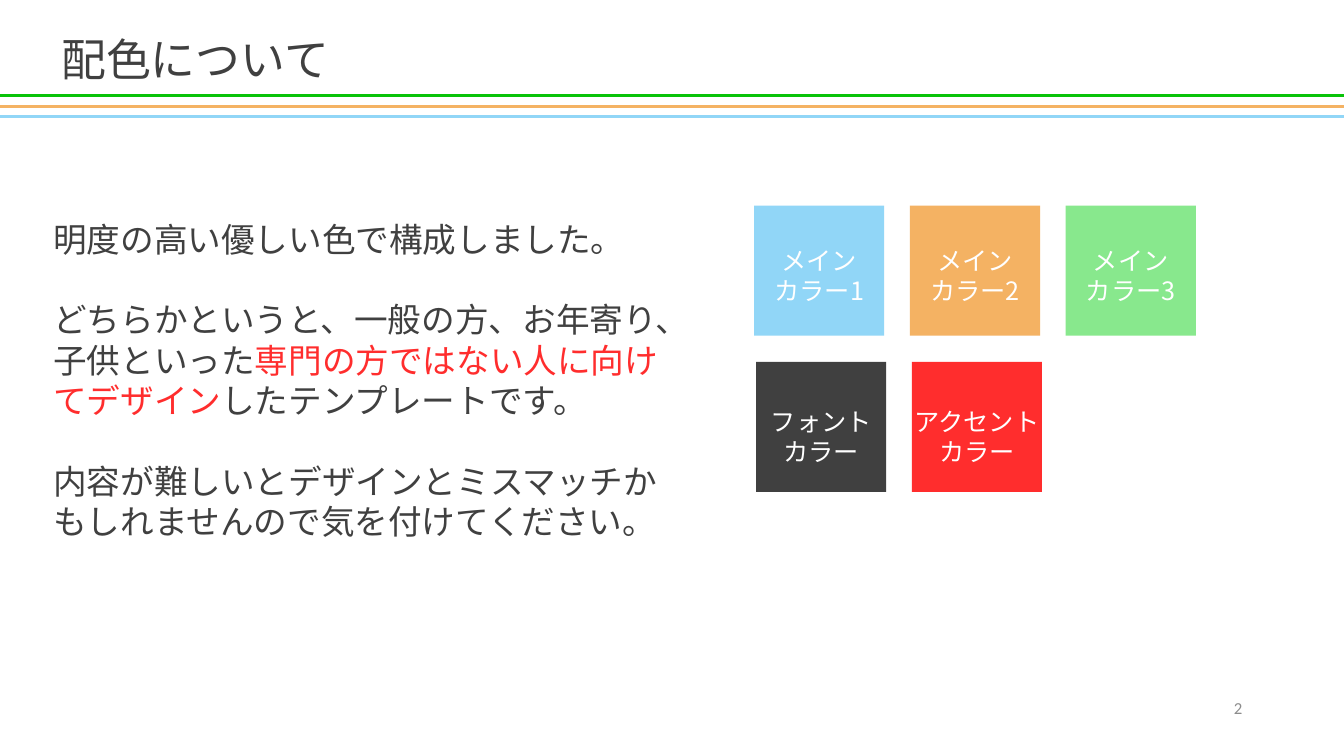
from lxml import etree
from pptx import Presentation
from pptx.dml.color import RGBColor
from pptx.enum.shapes import MSO_CONNECTOR as LINE, MSO_SHAPE as SHAPE
from pptx.enum.text import MSO_ANCHOR as ANCHOR, PP_ALIGN as ALIGN
from pptx.oxml.ns import qn
from pptx.util import Inches, Pt

SKY = RGBColor(0x91, 0xD6, 0xF7)
ORANGE = RGBColor(0xF4, 0xB2, 0x63)
GREEN = RGBColor(0x09, 0xC3, 0x09)
MINT = RGBColor(0x88, 0xE8, 0x8D)
DARK = RGBColor(0x40, 0x40, 0x40)
RED = RGBColor(0xFF, 0x2D, 0x2D)
WHITE = RGBColor(0xFF, 0xFF, 0xFF)
GRAY = RGBColor(0x8C, 0x8C, 0x8C)
FONT = "Noto Sans CJK JP"

WIDE, HIGH = 13.33, 7.5
TILE, STEP = 1.29, 1.545
TITLE = [[("配色について", DARK)]]
BODY = [
    [("明度の高い優しい色で構成しました。", DARK)],
    [("どちらかというと、一般の方、お年寄り、子供といった", DARK),
     ("専門の方ではない人に向けてデザイン", RED),
     ("したテンプレートです。", DARK)],
    [("内容が難しいとデザインとミスマッチかもしれませんので気を付けてください。", DARK)],
]
# Each tile: fill, label paragraphs, label width
MAIN = [(SKY, ["メイン", "カラー1"], 1.29),
        (ORANGE, ["メイン", "カラー2"], 1.51),
        (MINT, ["メイン", "カラー3"], 1.51)]
OTHER = [(DARK, ["フォントカラー"], 1.29),
         (RED, ["アクセントカラー"], 1.51)]


def add_text(slide, box, paras, size, align=ALIGN.LEFT, gap=0, wrap=True,
             anchor=ANCHOR.TOP, name=FONT):
    """Place paragraphs, each a list of (text, colour) runs, in a box."""
    frame = slide.shapes.add_textbox(*map(Inches, box)).text_frame
    frame.word_wrap, frame.vertical_anchor = wrap, anchor
    for i, runs in enumerate(paras):
        para = frame.paragraphs[0] if i == 0 else frame.add_paragraph()
        style = {"alignment": align, "line_spacing": Pt(size * 1.2),
                 "space_before": Pt(gap if i else 0)}
        for key, value in style.items():
            setattr(para, key, value)
        for text, color in runs:
            run = para.add_run()
            run.text = text
            for key, value in {"size": Pt(size), "name": name}.items():
                setattr(run.font, key, value)
            run.font.color.rgb = color
            east = etree.SubElement(run.font._element, qn("a:ea"))
            east.set("typeface", name)


def add_head(slide, left, top):
    """Draw the title and the three rules under it."""
    for i, color in enumerate([SKY, ORANGE, GREEN]):
        y = Inches(top + 0.89 - i * 0.105)
        rule = slide.shapes.add_connector(LINE.STRAIGHT, 0, y, Inches(WIDE), y)
        rule.line.color.rgb = color
        rule.line.width = Pt(2.25)
        etree.SubElement(rule._element.spPr, qn("a:effectLst"))
    add_text(slide, (left, top, 2.89, 0.64), TITLE, 32, wrap=False)


def add_tiles(slide, left, top, drop, tiles):
    """Draw a row of colour squares with labels set drop below their tops."""
    for i, (color, lines, wide) in enumerate(tiles):
        x = left + i * STEP
        tile = slide.shapes.add_shape(
            SHAPE.RECTANGLE, *map(Inches, (x, top, TILE, TILE)))
        tile.shadow.inherit = False
        tile.fill.solid()
        tile.fill.fore_color.rgb = color
        tile.line.fill.background()
        box = (x + (TILE - wide) / 2, top + drop, wide, 0.71)
        add_text(slide, box, [[(line, WHITE)] for line in lines], 18,
                 align=ALIGN.CENTER)


def main():
    deck = Presentation()
    deck.slide_width, deck.slide_height = Inches(WIDE), Inches(HIGH)
    slide = deck.slides.add_slide(deck.slide_layouts[6])
    add_head(slide, 0.51, 0.27)
    add_text(slide, (0.43, 2.12, 6.46, 3.33), BODY, 24, gap=28.8)
    add_tiles(slide, 7.48, 2.04, 0.34, MAIN)
    add_tiles(slide, 7.5, 3.59, 0.39, OTHER)
    add_text(slide, (9.42, 6.82, 3, 0.41), [[("2", GRAY)]], 12,
             align=ALIGN.RIGHT, anchor=ANCHOR.MIDDLE, name="Calibri")
    deck.save("out.pptx")


if __name__ == "__main__":
    main()
